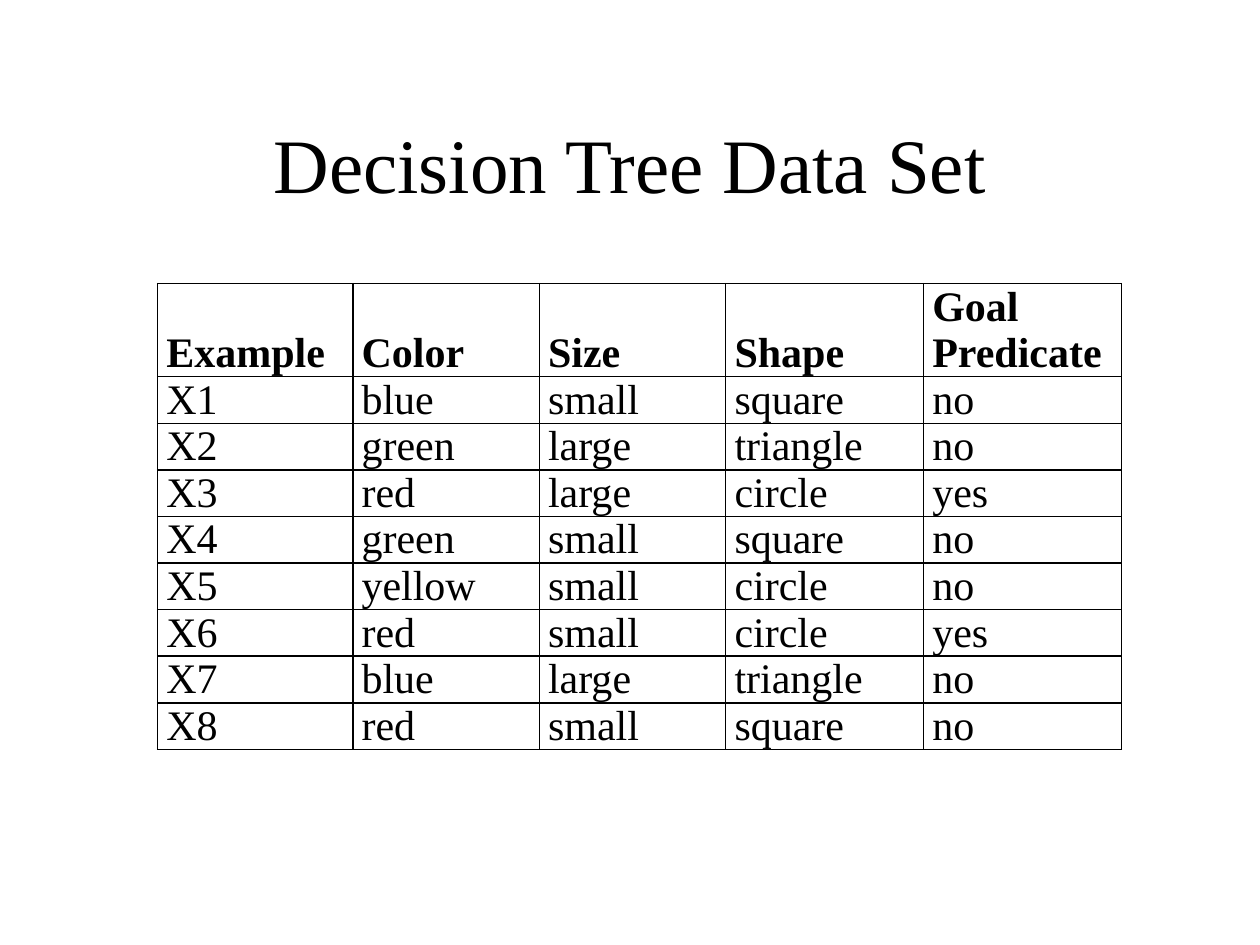
from lxml.etree import SubElement
from pptx import Presentation
from pptx.dml.color import RGBColor
from pptx.enum.text import MSO_ANCHOR, PP_ALIGN
from pptx.oxml.ns import qn
from pptx.util import Inches, Pt

FONT = "Times New Roman"
BLACK = "000000"
COLUMN_WIDTHS = [1.55, 1.48, 1.48, 1.57, 1.57]
LINE_HEIGHT = 0.37
HEADINGS = ["Example", "Color", "Size", "Shape", "Goal Predicate"]
EXAMPLES = [
    ["X1", "blue", "small", "square", "no"],
    ["X2", "green", "large", "triangle", "no"],
    ["X3", "red", "large", "circle", "yes"],
    ["X4", "green", "small", "square", "no"],
    ["X5", "yellow", "small", "circle", "no"],
    ["X6", "red", "small", "circle", "yes"],
    ["X7", "blue", "large", "triangle", "no"],
    ["X8", "red", "small", "square", "no"],
]


def color(hex_value):
    return RGBColor.from_string(hex_value)


def style_text(paragraph, size, bold=False):
    paragraph.font.name = FONT
    paragraph.font.size = Pt(size)
    paragraph.font.bold = bold
    paragraph.font.color.rgb = color(BLACK)


def add_borders(cell):
    properties = cell._tc.get_or_add_tcPr()
    for position, side in enumerate(["a:lnL", "a:lnR", "a:lnT", "a:lnB"]):
        border = SubElement(properties, qn(side), w=str(Pt(1)))
        fill = SubElement(border, qn("a:solidFill"))
        SubElement(fill, qn("a:srgbClr"), val=BLACK)
        properties.insert(position, border)


def fill_cell(cell, text, heading):
    cell.text = text
    cell.margin_left = cell.margin_right = Inches(0.07)
    cell.margin_top = cell.margin_bottom = 0
    cell.vertical_anchor = MSO_ANCHOR.BOTTOM if heading else MSO_ANCHOR.TOP
    cell.fill.background()
    style_text(cell.text_frame.paragraphs[0], 24, heading)
    add_borders(cell)


def place_title(slide, left, top, width, height):
    title = slide.shapes.title
    title.left, title.top = Inches(left), Inches(top)
    title.width, title.height = Inches(width), Inches(height)
    title.text = "Decision Tree Data Set"
    title.text_frame.vertical_anchor = MSO_ANCHOR.MIDDLE
    heading = title.text_frame.paragraphs[0]
    heading.alignment = PP_ALIGN.CENTER
    style_text(heading, 44)


def place_data_set(slide, left, top, width, height):
    rows = [HEADINGS] + EXAMPLES
    data_set = slide.shapes.add_table(
        len(rows), len(HEADINGS), Inches(left), Inches(top), Inches(width), Inches(height)
    ).table
    data_set.first_row = data_set.horz_banding = False
    for column, column_width in zip(data_set.columns, COLUMN_WIDTHS):
        column.width = Inches(column_width)
    for row_number, values in enumerate(rows):
        heading = row_number == 0
        data_set.rows[row_number].height = Inches(LINE_HEIGHT * (2 if heading else 1))
        for column_number, value in enumerate(values):
            fill_cell(data_set.cell(row_number, column_number), value, heading)


def main():
    presentation = Presentation()
    presentation.slide_width = Inches(10)
    presentation.slide_height = Inches(7.5)
    slide = presentation.slides.add_slide(presentation.slide_layouts[5])
    place_title(slide, 0.75, 0.67, 8.5, 1.25)
    place_data_set(slide, 1.25, 2.25, sum(COLUMN_WIDTHS), LINE_HEIGHT * (len(EXAMPLES) + 2))
    presentation.save("out.pptx")


if __name__ == "__main__":
    main()
